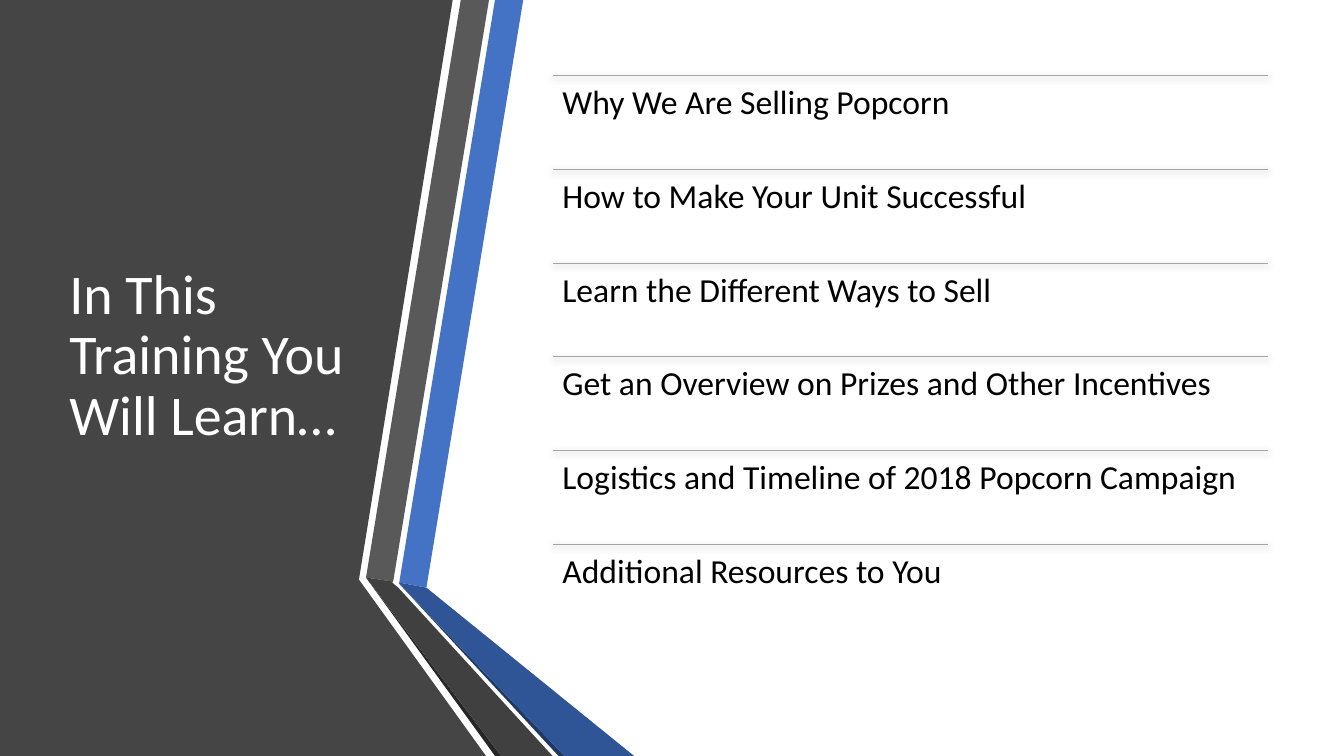
from dataclasses import dataclass

from lxml.etree import SubElement
from pptx import Presentation
from pptx.dml.color import RGBColor
from pptx.enum.shapes import MSO_CONNECTOR
from pptx.enum.text import MSO_ANCHOR
from pptx.oxml.ns import qn
from pptx.slide import Slide
from pptx.util import Emu, Pt

SCALE = 9144
FONT = "Calibri"
LEFT, TOP, WIDTH, PITCH = 548, 75, 710, 93


@dataclass
class Band:
    color: str
    points: list[tuple[int, int]]


@dataclass
class Label:
    text: str
    left: int
    top: int
    width: int
    height: int
    size: int
    color: str
    inset: tuple[int, int]
    anchor: MSO_ANCHOR = MSO_ANCHOR.TOP


BANDS = [
    Band("454545", [(0, 0), (449, 0), (356, 575), (482, 750), (0, 750)]),
    Band("4472C4", [(396, 578), (423, 583), (519, 0), (491, 0)]),
    Band("595959", [(485, 0), (457, 0), (363, 573), (390, 577)]),
    Band("262626", [(363, 573), (491, 750), (497, 750)]),
    Band("203864", [(396, 579), (554, 750), (560, 750)]),
    Band("2F5597", [(396, 579), (560, 750), (629, 750), (423, 583), (396, 578)]),
    Band("404040", [(548, 750), (395, 583), (389, 578), (390, 577), (363, 573), (497, 750)]),
]

TITLE = Label("In This Training You Will Learn…", 59, 75, 304, 558, 40, "FFFFFF",
              (10, 5), MSO_ANCHOR.MIDDLE)

TOPICS = [
    "Why We Are Selling Popcorn",
    "How to Make Your Unit Successful",
    "Learn the Different Ways to Sell",
    "Get an Overview on Prizes and Other Incentives",
    "Logistics and Timeline of 2018 Popcorn Campaign",
    "Additional Resources to You",
]


def px(value: int) -> Emu:
    """Turn px into EMU."""
    return Emu(value * SCALE)


def rgb(color: str) -> RGBColor:
    """Turn a hex string into a colour."""
    return RGBColor.from_string(color)


def add_band(slide: Slide, band: Band) -> None:
    """Draw one filled outline."""
    start, *rest = band.points
    pen = slide.shapes.build_freeform(*start, scale=SCALE)
    pen.add_line_segments(rest, close=True)
    shape = pen.convert_to_shape()
    shape.shadow.inherit = False
    shape.fill.solid()
    shape.fill.fore_color.rgb = rgb(band.color)
    shape.line.fill.background()


def add_label(slide: Slide, label: Label) -> None:
    """Place one wrapped text box."""
    box = slide.shapes.add_textbox(px(label.left), px(label.top),
                                   px(label.width), px(label.height))
    frame = box.text_frame
    frame.word_wrap = True
    frame.vertical_anchor = label.anchor
    side, edge = label.inset
    frame.margin_left = frame.margin_right = px(side)
    frame.margin_top = frame.margin_bottom = px(edge)
    para = frame.paragraphs[0]
    para.line_spacing = 0.9
    run = para.add_run()
    run.text = label.text
    run.font.name = FONT
    run.font.size = Pt(label.size)
    run.font.color.rgb = rgb(label.color)


def add_rule(slide: Slide, top: int) -> None:
    """Draw a grey rule with a soft shadow below."""
    rule = slide.shapes.add_connector(MSO_CONNECTOR.STRAIGHT, px(LEFT), px(top),
                                      px(LEFT + WIDTH), px(top))
    rule.line.color.rgb = rgb("A5A5A5")
    rule.line.width = Pt(0.5)
    effects = SubElement(rule._element.spPr, qn("a:effectLst"))
    shadow = SubElement(effects, qn("a:outerShdw"), blurRad=str(Pt(4.5)),
                        dist=str(Pt(1.5)), dir="5400000", algn="ctr", rotWithShape="0")
    tint = SubElement(shadow, qn("a:srgbClr"), val="000000")
    SubElement(tint, qn("a:alpha"), val="63000")


def main() -> None:
    """Build and save the slide."""
    deck = Presentation()
    deck.slide_width, deck.slide_height = px(1333), px(750)
    slide = deck.slides.add_slide(deck.slide_layouts[6])
    for band in BANDS:
        add_band(slide, band)
    add_label(slide, TITLE)
    for row, topic in enumerate(TOPICS):
        top = TOP + row * PITCH
        add_rule(slide, top)
        add_label(slide, Label(topic, LEFT, top, WIDTH, PITCH, 24, "000000", (10, 10)))
    deck.save("out.pptx")


if __name__ == "__main__":
    main()
